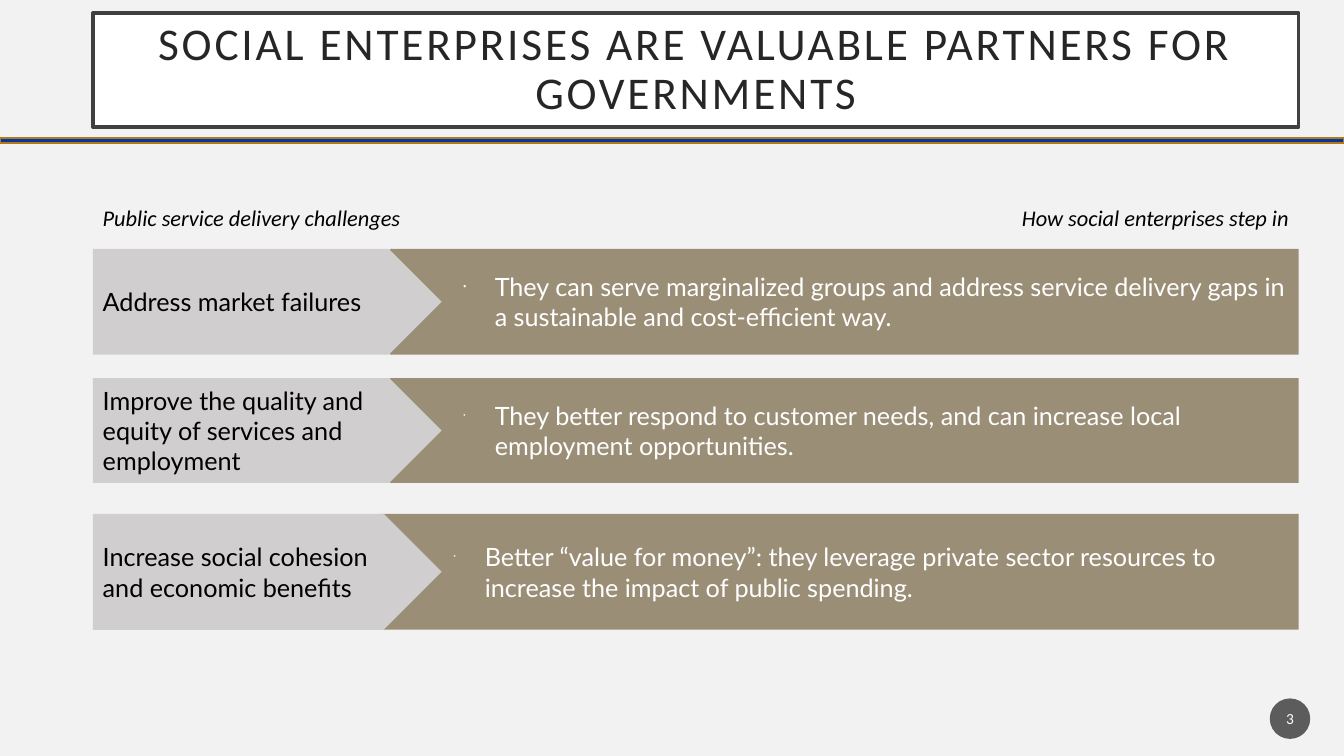
import pptx
import pptx.util
import pptx.dml.color
import pptx.enum.shapes
import pptx.enum.text
import pptx.oxml.ns
import lxml.etree

Cm = pptx.util.Cm
Pt = pptx.util.Pt
RGBColor = pptx.dml.color.RGBColor
Shape = pptx.enum.shapes.MSO_SHAPE
Align = pptx.enum.text.PP_ALIGN
Anchor = pptx.enum.text.MSO_ANCHOR
qn = pptx.oxml.ns.qn

PAPER = RGBColor(0xF2, 0xF2, 0xF2)
WHITE = RGBColor(0xFF, 0xFF, 0xFF)
BLACK = RGBColor(0, 0, 0)
BLUE = RGBColor(0x00, 0x39, 0xA6)
GOLD = RGBColor(0xB6, 0x78, 0x15)
FRAME = RGBColor(0x40, 0x40, 0x40)
TITLE_INK = RGBColor(0x26, 0x26, 0x26)
BADGE = RGBColor(0x1D, 0x1D, 0x1D)
TAUPE = RGBColor(0x87, 0x79, 0x5D)
SILVER = RGBColor(0xD0, 0xCE, 0xCE)

LEFT, RIGHT = 2.34, 32.73
ARROW_WIDTH = 8.79
ROWS = [
    (6.27, 2.67, 9.83, 34, "Address market failures",
     "They can serve marginalized groups and address service delivery gaps in "
     "a sustainable and cost-efficient way."),
    (9.53, 2.64, 9.83, 25, "Improve the quality and equity of services and employment",
     "They better respond to customer needs, and can increase local employment "
     "opportunities."),
    (12.95, 2.92, 9.58, 25, "Increase social cohesion and economic benefits",
     "Better “value for money”: they leverage private sector resources to "
     "increase the impact of public spending."),
]


class PartnersSlide:
    heading_font = "Calibri"
    body_font = "Lato"

    def __init__(self, deck):
        self.slide = deck.slides.add_slide(deck.slide_layouts[5])
        self.slide.background.fill.solid()
        self.slide.background.fill.fore_color.rgb = PAPER

    def set_text(self, frame, text, size, font, color, align=Align.LEFT, italic=False):
        frame.word_wrap = True
        paragraph = frame.paragraphs[0]
        paragraph.text = text
        paragraph.alignment = align
        paragraph.font.size = Pt(size)
        paragraph.font.name = font
        paragraph.font.color.rgb = color
        paragraph.font.italic = italic
        return paragraph

    def title(self, text, left, top, width, height):
        title = self.slide.shapes.title
        title.left, title.top, title.width, title.height = map(Cm, (left, top, width, height))
        title.fill.solid()
        title.fill.fore_color.rgb = WHITE
        title.line.color.rgb = FRAME
        title.line.width = Pt(2.5)
        frame = title.text_frame
        frame.auto_size = pptx.enum.text.MSO_AUTO_SIZE.NONE
        frame.vertical_anchor = Anchor.MIDDLE
        frame.margin_left = frame.margin_right = Cm(0.5)
        frame.margin_top = frame.margin_bottom = Cm(0.5)
        heading = self.set_text(frame, text, 32.4, self.heading_font, TITLE_INK, Align.CENTER)
        heading.line_spacing = 0.9
        heading.runs[0]._r.get_or_add_rPr().set("spc", "200")

    def shape(self, kind, left, top, width, height, fill, opacity=100):
        shape = self.slide.shapes.add_shape(kind, *map(Cm, (left, top, width, height)))
        shape.shadow.inherit = False
        shape.fill.solid()
        shape.fill.fore_color.rgb = fill
        shape.line.fill.background()
        if opacity < 100:
            color = shape._element.spPr.find(qn("a:solidFill"))[0]
            lxml.etree.SubElement(color, qn("a:alpha")).set("val", str(opacity * 1000))
        shape.text_frame.vertical_anchor = Anchor.MIDDLE
        return shape

    def rule(self, top, width, height):
        rule = self.shape(Shape.RECTANGLE, 0, top, width, height, BLUE)
        rule.line.color.rgb = GOLD
        rule.line.width = Pt(1)

    def answer(self, left, top, height, text, bullet_percent):
        band = self.shape(Shape.RECTANGLE, left, top, RIGHT - left, height, TAUPE, 82)
        properties = band.text_frame.paragraphs[0]._p.get_or_add_pPr()
        properties.set("marL", str(Cm(2.39)))
        properties.set("indent", str(Cm(-0.79)))
        for tag, name, value in (("a:buSzPct", "val", str(bullet_percent * 1000)),
                                 ("a:buFont", "typeface", "Arial"),
                                 ("a:buChar", "char", "•")):
            lxml.etree.SubElement(properties, qn(tag)).set(name, value)
        self.set_text(band.text_frame, text, 18, self.body_font, WHITE)

    def challenge(self, top, height, text):
        arrow = self.shape(Shape.PENTAGON, LEFT, top, ARROW_WIDTH, height, SILVER)
        arrow.adjustments[0] = 0.5
        self.set_text(arrow.text_frame, text, 18, self.body_font, BLACK)

    def caption(self, text, left, width, align):
        box = self.slide.shapes.add_textbox(Cm(left), Cm(5.03), Cm(width), Cm(0.94))
        self.set_text(box.text_frame, text, 16, self.heading_font, BLACK, align, True)

    def page_number(self, text):
        badge = self.shape(Shape.OVAL, 32, 17.6, 1.02, 1.02, BADGE, 70)
        badge.text_frame.margin_left = badge.text_frame.margin_right = Cm(0.05)
        self.set_text(badge.text_frame, text, 11, self.heading_font, WHITE, Align.CENTER)


def main():
    deck = pptx.Presentation()
    deck.slide_width, deck.slide_height = Cm(33.87), Cm(19.05)
    page = PartnersSlide(deck)
    page.rule(3.48, 33.87, 0.13)
    page.title("SOCIAL ENTERPRISES ARE VALUABLE PARTNERS FOR GOVERNMENTS",
               LEFT, 0.33, RIGHT - LEFT, 2.87)
    page.page_number("3")
    for top, height, band_left, bullet_percent, challenge, answer in ROWS:
        page.answer(band_left, top, height, answer, bullet_percent)
        page.challenge(top, height, challenge)
    page.caption("How social enterprises step in", 24.22, 8.51, Align.RIGHT)
    page.caption("Public service delivery challenges", LEFT, 9.32, Align.LEFT)
    deck.save("out.pptx")


if __name__ == "__main__":
    main()
